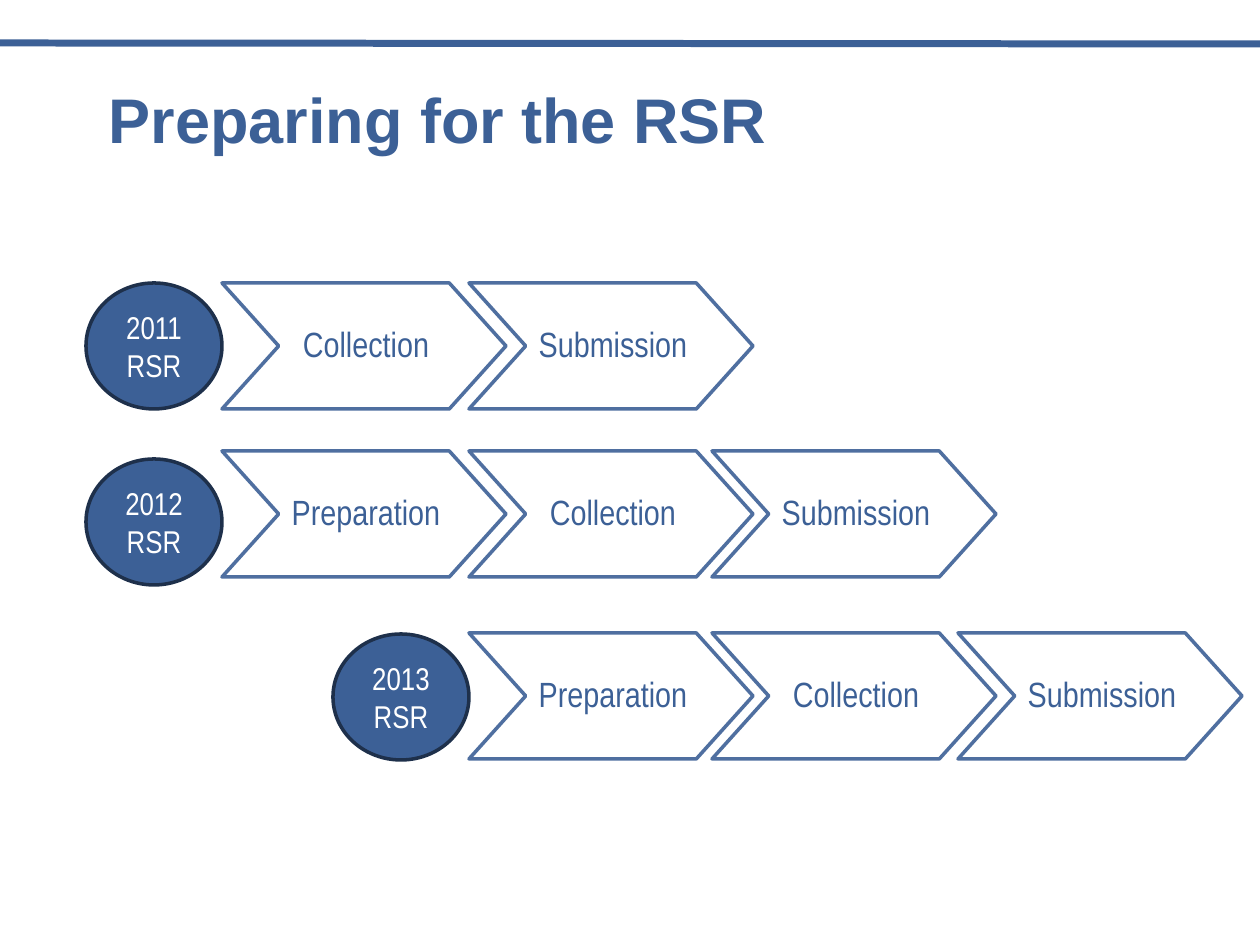
import pptx
import pptx.util
import pptx.dml.color
import pptx.enum.shapes
import pptx.enum.text
import pptx.oxml.ns
import pptx.oxml.xmlchemy
from dataclasses import dataclass

TITLE = "Preparing for the RSR"
CYCLES = [
    {"label": "2011 RSR", "column": 0, "top": 283, "badge_top": 283,
     "steps": ["Collection", "Submission"]},
    {"label": "2012 RSR", "column": 0, "top": 451, "badge_top": 459,
     "steps": ["Preparation", "Collection", "Submission"]},
    {"label": "2013 RSR", "column": 1, "top": 633, "badge_top": 634,
     "steps": ["Preparation", "Collection", "Submission"]},
]


@dataclass(frozen=True)
class Theme:
    blue: str = "3C6096"
    navy: str = "1E304B"
    white: str = "FFFFFF"
    heading_font: str = "Arial"
    body_font: str = "Arial Narrow"
    title_size: int = 36
    step_size: int = 20
    badge_size: int = 18
    outline: int = 2
    rule: int = 4
    opacity: int = 90


THEME = Theme()
SCALE = 914400 / 126
COLUMNS = [222, 469, 712, 958]
STEP_WIDTH, BADGE_WIDTH, HEIGHT = 284, 136, 126
SHAPES = pptx.enum.shapes.MSO_SHAPE
ALIGN = pptx.enum.text.PP_ALIGN


def px(*values):
    return [pptx.util.Emu(round(value * SCALE)) for value in values]


def color(value):
    return pptx.dml.color.RGBColor.from_string(value)


def assign(target, values):
    for name, value in values.items():
        setattr(target, name, value)


def write(shape, text, font, size, ink, insets, para_format, bold=False):
    frame = shape.text_frame
    sides = ("margin_left", "margin_top", "margin_right", "margin_bottom")
    assign(frame, dict(zip(sides, px(*insets))))
    assign(frame, {"word_wrap": True,
                   "auto_size": pptx.enum.text.MSO_AUTO_SIZE.NONE,
                   "vertical_anchor": pptx.enum.text.MSO_ANCHOR.MIDDLE})
    para = frame.paragraphs[0]
    assign(para, para_format)
    span = para.add_run()
    span.text = text
    assign(span.font, {"name": font, "size": pptx.util.Pt(size), "bold": bold})
    span.font.color.rgb = color(ink)


def add_outlined(page, kind, place, fill, line):
    shape = page.shapes.add_shape(kind, *px(*place))
    shape.shadow.inherit = False
    shape.fill.solid()
    shape.fill.fore_color.rgb = color(fill)
    shape.line.color.rgb = color(line)
    shape.line.width = pptx.util.Pt(THEME.outline)
    return shape


def add_step(page, text, left, top):
    shape = add_outlined(page, SHAPES.CHEVRON, (left, top, STEP_WIDTH, HEIGHT),
                         THEME.white, THEME.blue)
    shape.adjustments[0] = 0.45
    for tint in shape._element.spPr.iter(pptx.oxml.ns.qn("a:srgbClr")):
        alpha = pptx.oxml.xmlchemy.OxmlElement("a:alpha")
        alpha.set("val", str(THEME.opacity * 1000))
        tint.append(alpha)
    write(shape, text, THEME.body_font, THEME.step_size, THEME.blue,
          (5, 1, 1, 1), {"alignment": ALIGN.CENTER, "line_spacing": 0.9})


def add_badge(page, text, left, top):
    shape = add_outlined(page, SHAPES.OVAL, (left, top, BADGE_WIDTH, HEIGHT),
                         THEME.blue, THEME.navy)
    write(shape, text, THEME.body_font, THEME.badge_size, THEME.white,
          (13, 6, 13, 6), {"alignment": ALIGN.CENTER})


def add_rule(page):
    rule = page.shapes.add_connector(
        pptx.enum.shapes.MSO_CONNECTOR.STRAIGHT, *px(0, 43, 1260, 44))
    rule.line.color.rgb = color(THEME.blue)
    rule.line.width = pptx.util.Pt(THEME.rule)
    rule._element.spPr.append(pptx.oxml.xmlchemy.OxmlElement("a:effectLst"))


def add_title(page):
    title = page.shapes.title
    assign(title, dict(zip(("left", "top", "width", "height"),
                           px(96, 48, 1133, 152))))
    write(title, TITLE, THEME.heading_font, THEME.title_size, THEME.blue,
          (13, 6, 13, 6),
          {"alignment": ALIGN.LEFT, "line_spacing": pptx.util.Pt(37)}, bold=True)


def main():
    deck = pptx.Presentation()
    deck.slide_width, deck.slide_height = px(1260, 945)
    page = deck.slides.add_slide(deck.slide_layouts.get_by_name("Title Only"))
    add_rule(page)
    add_title(page)
    for cycle in CYCLES:
        columns = COLUMNS[cycle["column"]:]
        add_badge(page, cycle["label"], columns[0] - BADGE_WIDTH,
                  cycle["badge_top"])
        for text, left in zip(cycle["steps"], columns):
            add_step(page, text, left, cycle["top"])
    deck.save("out.pptx")


if __name__ == "__main__":
    main()
